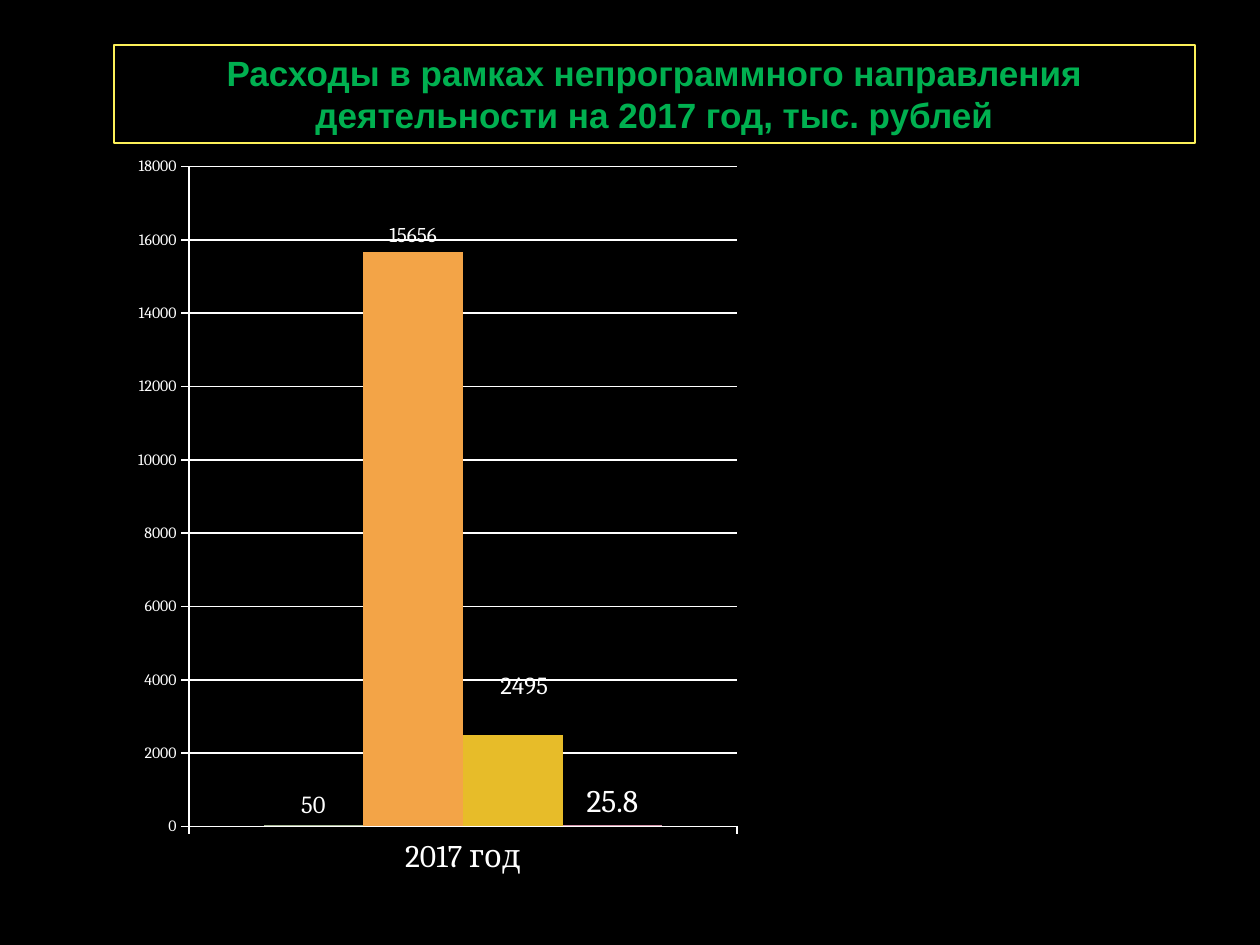
from pptx import Presentation
from pptx.chart.data import CategoryChartData
from pptx.dml.color import RGBColor
from pptx.enum.chart import XL_CHART_TYPE, XL_LABEL_POSITION, XL_TICK_MARK
from pptx.enum.shapes import MSO_SHAPE
from pptx.enum.text import MSO_ANCHOR, MSO_AUTO_SIZE, PP_ALIGN
from pptx.oxml import parse_xml
from pptx.oxml.ns import nsdecls, qn
from pptx.util import Emu, Pt

COLUMN = XL_CHART_TYPE.COLUMN_CLUSTERED
ABOVE = XL_LABEL_POSITION.OUTSIDE_END
OUT, NONE = XL_TICK_MARK.OUTSIDE, XL_TICK_MARK.NONE
RECT = MSO_SHAPE.RECTANGLE
MIDDLE = MSO_ANCHOR.MIDDLE
GROW = MSO_AUTO_SIZE.SHAPE_TO_FIT_TEXT
CENTER = PP_ALIGN.CENTER

TITLE = "Расходы в рамках непрограммного направления деятельности на 2017 год, тыс. рублей"
# name, value, colour, label size
SERIES = [
    ("Series 1", 50, "A5B592", 14),
    ("Series 2", 15656, "F3A447", 12),
    ("Series 3", 2495, "E7BC29", 14),
    ("Series 4", 25.8, "D092A7", 18),
]
PLOT = {"x": 0.14, "y": 0.013, "w": 0.468, "h": 0.903}


def px(n):
    return Emu(n * 914400 // 126)


def rgb(code):
    return RGBColor.from_string(code)


def put(item, values):
    for name, value in values.items():
        setattr(item, name, value)


def place(sizes, modes):
    """Return a manual chart layout element."""
    tags = {**modes, **sizes}
    body = "".join(f'<c:{tag} val="{val}"/>' for tag, val in tags.items())
    return parse_xml(f'<c:layout {nsdecls("c")}><c:manualLayout>{body}'
                     '</c:manualLayout></c:layout>')


class Page:
    white = "FFFFFF"
    serif = "Cambria"

    def __init__(self, deck):
        self.slide = deck.slides.add_slide(deck.slide_layouts[6])
        fill = self.slide.background.fill
        fill.solid()
        fill.fore_color.rgb = rgb("000000")

    def font(self, font, color, **values):
        put(font, values)
        font.color.rgb = rgb(color)

    def line(self, line, color, width=1):
        line.color.rgb = rgb(color)
        line.width = Pt(width)

    def title(self, text, box):
        shape = self.slide.shapes.add_shape(RECT, *map(px, box))
        shape.shadow.inherit = False
        shape.fill.background()
        self.line(shape.line, "FCF059", 0.75)
        frame = shape.text_frame
        put(frame, {"word_wrap": True, "auto_size": GROW, "vertical_anchor": MIDDLE})
        para = frame.paragraphs[0]
        para.alignment = CENTER
        run = para.add_run()
        run.text = text
        self.font(run.font, "00B050", name="Arial", size=Pt(20), bold=True)

    def axis(self, axis, size, **values):
        put(axis, {"major_tick_mark": OUT, "minor_tick_mark": NONE, **values})
        self.line(axis.format.line, self.white)
        self.font(axis.tick_labels.font, self.white, name=self.serif, size=Pt(size))

    def chart(self, cat, rows, box):
        data = CategoryChartData()
        data.categories = [cat]
        for name, value, *_ in rows:
            data.add_series(name, [value])
        chart = self.slide.shapes.add_chart(COLUMN, *map(px, box), data).chart
        put(chart, {"has_legend": False, "has_title": False})
        self.font(chart.font, self.white, name=self.serif, size=Pt(18))
        self.axis(chart.category_axis, 18)
        self.axis(chart.value_axis, 9, minimum_scale=0, maximum_scale=18000,
                  major_unit=2000, has_major_gridlines=True)
        self.line(chart.value_axis.major_gridlines.format.line, self.white)
        plot = chart.plots[0]
        put(plot, {"gap_width": 150, "overlap": 0, "vary_by_categories": False})
        for bar, (_, _, color, size) in zip(plot.series, rows):
            bar.format.fill.solid()
            bar.format.fill.fore_color.rgb = rgb(color)
            put(bar.data_labels, {"show_value": True, "position": ABOVE})
            self.font(bar.data_labels.font, self.white, name=self.serif, size=Pt(size))
        area = chart.element.find(".//" + qn("c:plotArea"))
        for old in area.findall(qn("c:layout")):
            area.remove(old)
        modes = {"layoutTarget": "inner", "xMode": "edge", "yMode": "edge"}
        area.insert(0, place(PLOT, modes))
        return chart

    def shift(self, bar, size, dx, dy):
        """Move the first label of a series by a share of the chart size."""
        point = bar.points[0].data_label
        self.font(point.font, self.white, name=self.serif, size=Pt(size))
        point.position = ABOVE
        label = bar.data_labels._element.find(qn("c:dLbl"))
        label.insert(1, place({"x": dx, "y": dy}, {}))


def main():
    deck = Presentation()
    put(deck, {"slide_width": px(1260), "slide_height": px(945)})
    page = Page(deck)
    chart = page.chart("2017 год", SERIES, (25, 157, 1171, 731))
    page.shift(chart.plots[0].series[2], 14, 0.01, -0.04)
    page.title(TITLE, (114, 45, 1081, 98))
    deck.save("out.pptx")


if __name__ == "__main__":
    main()
